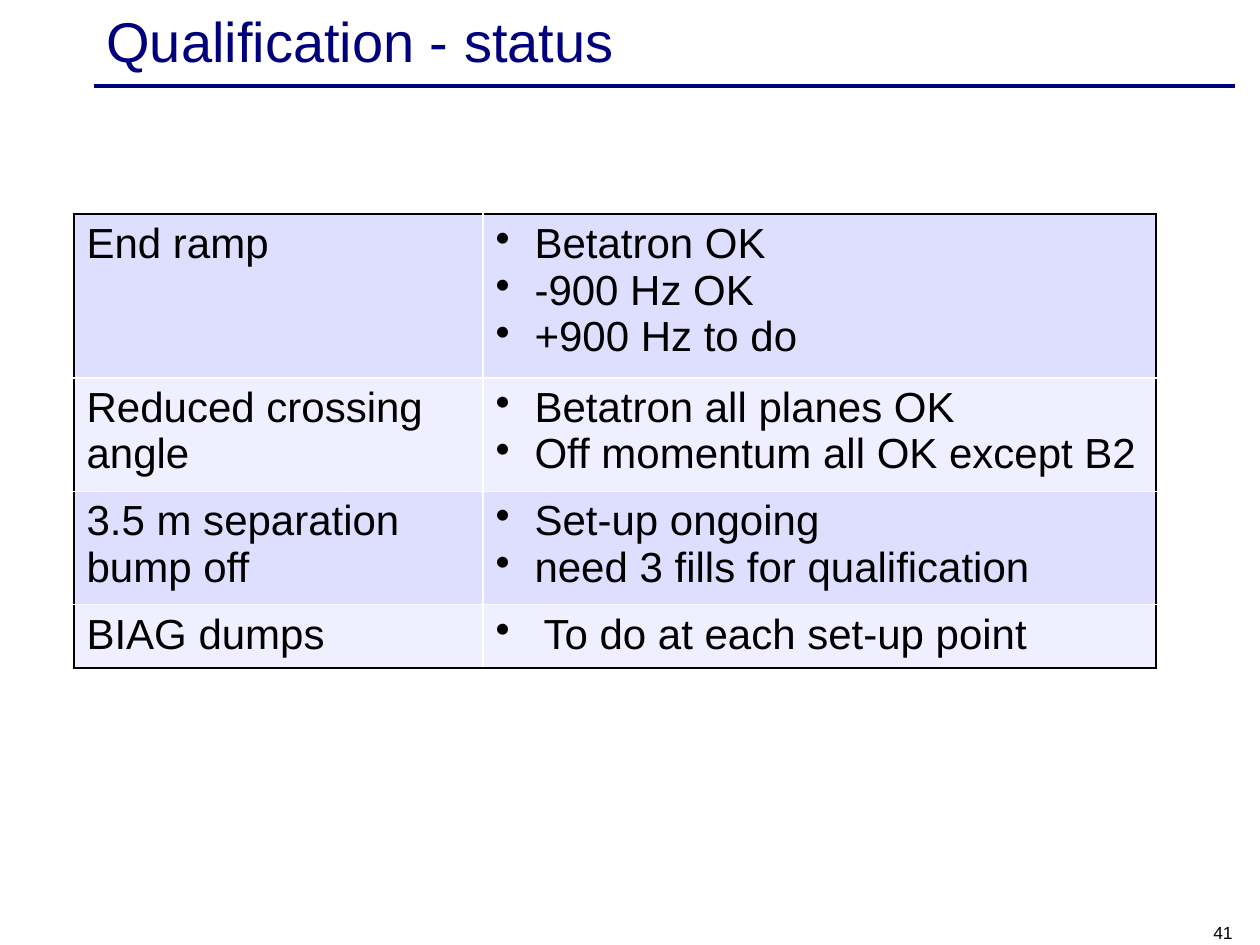
from dataclasses import dataclass

from lxml.etree import SubElement
from pptx import Presentation
from pptx.dml.color import RGBColor
from pptx.enum.shapes import MSO_CONNECTOR as Connector
from pptx.enum.text import MSO_ANCHOR as Anchor, PP_ALIGN as Align
from pptx.oxml.ns import qn
from pptx.util import Pt

SCALE = 914400 / 126  # EMU per px


@dataclass(frozen=True)
class Theme:
    font: str = "Arial"
    title_size: int = 32
    body_size: int = 24
    number_size: int = 10
    rule_width: int = 2
    border_width: int = 1
    navy: str = "00007D"
    black: str = "000000"
    white: str = "FFFFFF"
    bands: tuple[str, str] = ("DEDEFF", "EFEFFF")


@dataclass(frozen=True)
class Label:
    text: str
    box: tuple[int, int, int, int]
    size: int
    color: str
    anchor: Anchor
    align: Align


@dataclass(frozen=True)
class Check:
    name: str
    results: tuple[str, ...]
    height: int
    indent: int = 39


THEME = Theme()
LABELS = (
    Label("Qualification - status", (94, 4, 1134, 72), THEME.title_size,
          THEME.navy, Anchor.MIDDLE, Align.LEFT),
    Label("41", (951, 914, 294, 35), THEME.number_size,
          THEME.black, Anchor.BOTTOM, Align.RIGHT),
)
CHECKS = (
    Check("End ramp", ("Betatron OK", "-900 Hz OK", "+900 Hz to do"), 153),
    Check("Reduced crossing angle",
          ("Betatron all planes OK", "Off momentum all OK except B2"), 107),
    Check("3.5 m separation bump off",
          ("Set-up ongoing", "need 3 fills for qualification"), 106),
    Check("BIAG dumps", ("To do at each set-up point",), 59, indent=48),
)
TABLE_LEFT, TABLE_TOP = 74, 214
COLUMNS = (409, 673)


def px(length: int) -> int:
    return round(length * SCALE)


def style(paragraph, size: int, color: str, align: Align = Align.LEFT) -> None:
    paragraph.alignment = align
    values = {"name": THEME.font, "size": Pt(size), "bold": False}
    for attribute, value in values.items():
        setattr(paragraph.font, attribute, value)
    paragraph.font.color.rgb = RGBColor.from_string(color)


def add_label(slide, label: Label) -> None:
    frame = slide.shapes.add_textbox(*map(px, label.box)).text_frame
    for attribute, value in {"word_wrap": True, "vertical_anchor": label.anchor,
                             "text": label.text}.items():
        setattr(frame, attribute, value)
    style(frame.paragraphs[0], label.size, label.color, label.align)


def add_title_rule(slide) -> None:
    rule = slide.shapes.add_connector(
        Connector.STRAIGHT, px(94), px(86), px(1235), px(86))
    rule.line.color.rgb = RGBColor.from_string(THEME.navy)
    rule.line.width = Pt(THEME.rule_width)
    SubElement(rule.element.spPr, qn("a:effectLst"))


def add_bullet(paragraph, indent: int) -> None:
    properties = paragraph._p.get_or_add_pPr()
    properties.set("marL", str(px(indent)))
    properties.set("indent", str(-px(indent)))
    SubElement(properties, qn("a:buChar"), char="•")


def set_borders(cell, outer: dict[str, bool]) -> None:
    """Draw outer sides black and inner sides white."""
    properties = cell._tc.get_or_add_tcPr()
    for place, (side, is_outer) in enumerate(outer.items()):
        border = SubElement(properties, qn(f"a:ln{side}"),
                            w=str(Pt(THEME.border_width)))
        fill = SubElement(border, qn("a:solidFill"))
        SubElement(fill, qn("a:srgbClr"),
                   val=THEME.black if is_outer else THEME.white)
        properties.insert(place, border)


def fill_cell(cell, lines: tuple[str, ...], band: str, indent: int = 0) -> None:
    cell.fill.solid()
    cell.fill.fore_color.rgb = RGBColor.from_string(band)
    cell.text = "\n".join(lines)
    for paragraph in cell.text_frame.paragraphs:
        if indent:
            add_bullet(paragraph, indent)
        style(paragraph, THEME.body_size, THEME.black)


def add_status_table(slide, checks: tuple[Check, ...]) -> None:
    table = slide.shapes.add_table(
        len(checks), len(COLUMNS), px(TABLE_LEFT), px(TABLE_TOP),
        px(sum(COLUMNS)), px(sum(check.height for check in checks))).table
    for flag in ("first_row", "horz_banding"):
        setattr(table, flag, False)
    for column, width in zip(table.columns, COLUMNS):
        column.width = px(width)
    for row, check in enumerate(checks):
        table.rows[row].height = px(check.height)
        band = THEME.bands[row % 2]
        fill_cell(table.cell(row, 0), (check.name,), band)
        fill_cell(table.cell(row, 1), check.results, band, check.indent)
        for column in range(len(COLUMNS)):
            set_borders(table.cell(row, column), {
                "L": column == 0, "R": column == len(COLUMNS) - 1,
                "T": row == 0, "B": row == len(checks) - 1})


def main() -> None:
    deck = Presentation()
    deck.slide_width, deck.slide_height = px(1260), px(945)
    slide = deck.slides.add_slide(deck.slide_layouts[6])
    add_title_rule(slide)
    for label in LABELS:
        add_label(slide, label)
    add_status_table(slide, CHECKS)
    deck.save("out.pptx")


if __name__ == "__main__":
    main()
